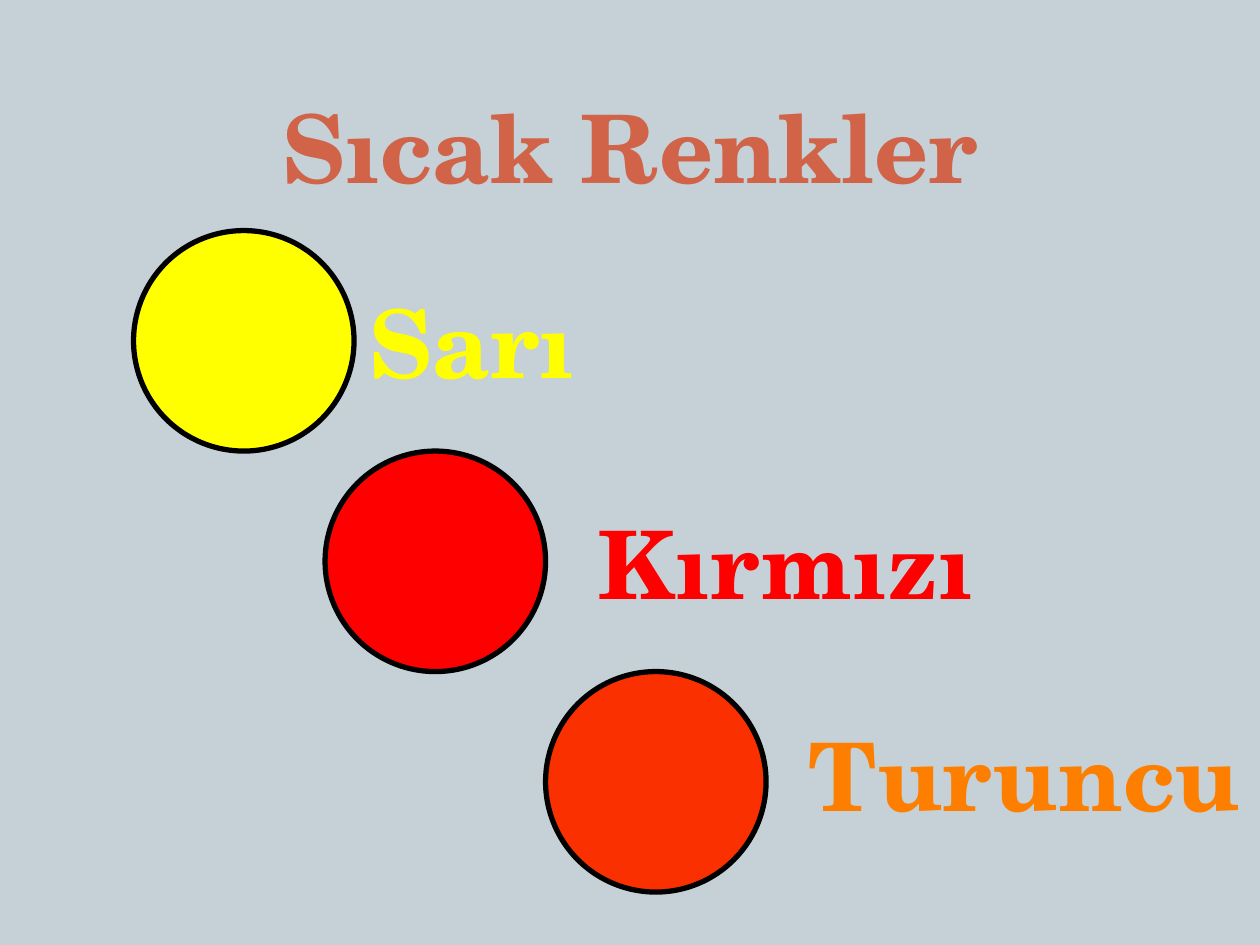
import dataclasses

import pptx
import pptx.dml.color
import pptx.enum.shapes
import pptx.enum.text
import pptx.util

ANCHOR = pptx.enum.text.MSO_ANCHOR


@dataclasses.dataclass(frozen=True)
class Theme:
    background: str = "C5D1D7"
    title: str = "D16349"
    outline: str = "000000"
    yellow: str = "FFFF00"
    red: str = "FF0000"
    deep_orange: str = "FA3000"
    orange: str = "FE7F00"
    font: str = "TeX Gyre Schola"
    size: int = 54
    outline_width: int = 3


THEME = Theme()
WIDTH, HEIGHT = 10, 7.5
DIAMETER = 1.75
FIRST_ROW = 1.83


def rgb(color):
    return pptx.dml.color.RGBColor.from_string(color)


def place(sp, box):
    sp.left, sp.top, sp.width, sp.height = map(pptx.util.Inches, box)


def write(sp, text, color, anchor=ANCHOR.MIDDLE):
    """Fill a text shape with one bold, centred line."""
    tf = sp.text_frame
    tf.word_wrap = True
    tf.auto_size = pptx.enum.text.MSO_AUTO_SIZE.NONE
    tf.vertical_anchor = anchor
    tf.margin_left = tf.margin_right = 0
    p = tf.paragraphs[0]
    p.alignment = pptx.enum.text.PP_ALIGN.CENTER
    r = p.add_run()
    r.text = text
    r.font.name = THEME.font
    r.font.size = pptx.util.Pt(THEME.size)
    r.font.bold = True
    r.font.color.rgb = rgb(color)


def add_title(s, box, text):
    sp = s.shapes.title
    place(sp, box)
    write(sp, text, THEME.title, anchor=ANCHOR.BOTTOM)


def add_disc(s, box, color):
    sp = s.shapes.add_shape(pptx.enum.shapes.MSO_SHAPE.OVAL,
                            *map(pptx.util.Inches, box))
    sp.shadow.inherit = False
    sp.fill.solid()
    sp.fill.fore_color.rgb = rgb(color)
    sp.line.color.rgb = rgb(THEME.outline)
    sp.line.width = pptx.util.Pt(THEME.outline_width)


def add_label(s, box, text, color):
    sp = s.shapes.add_textbox(*map(pptx.util.Inches, box))
    write(sp, text, color)


def main():
    prs = pptx.Presentation()
    prs.slide_width = pptx.util.Inches(WIDTH)
    prs.slide_height = pptx.util.Inches(HEIGHT)
    s = prs.slides.add_slide(prs.slide_layouts[5])
    s.background.fill.solid()
    s.background.fill.fore_color.rgb = rgb(THEME.background)

    # Title
    margin = 0.075 * WIDTH
    add_title(s, (margin, -0.07, WIDTH - 2 * margin, 1.73), "Sıcak Renkler")

    # Staircase of discs, one row each: left, fill, label, its colour and box
    colors = [
        (1.06, THEME.yellow, "Sarı", THEME.yellow, (2.81, 2.33, 1.87, 0.75)),
        (2.58, THEME.red, "Kırmızı", THEME.red, (4.27, 4.07, 3.94, 0.77)),
        (4.33, THEME.deep_orange, "Turuncu", THEME.orange,
         (6.26, 5.78, 3.74, 0.72)),
    ]
    for row, (left, fill, name, color, label_box) in enumerate(colors):
        top = FIRST_ROW + row * DIAMETER
        add_disc(s, (left, top, DIAMETER, DIAMETER), fill)
        add_label(s, label_box, name, color)

    prs.save("out.pptx")


if __name__ == "__main__":
    main()
